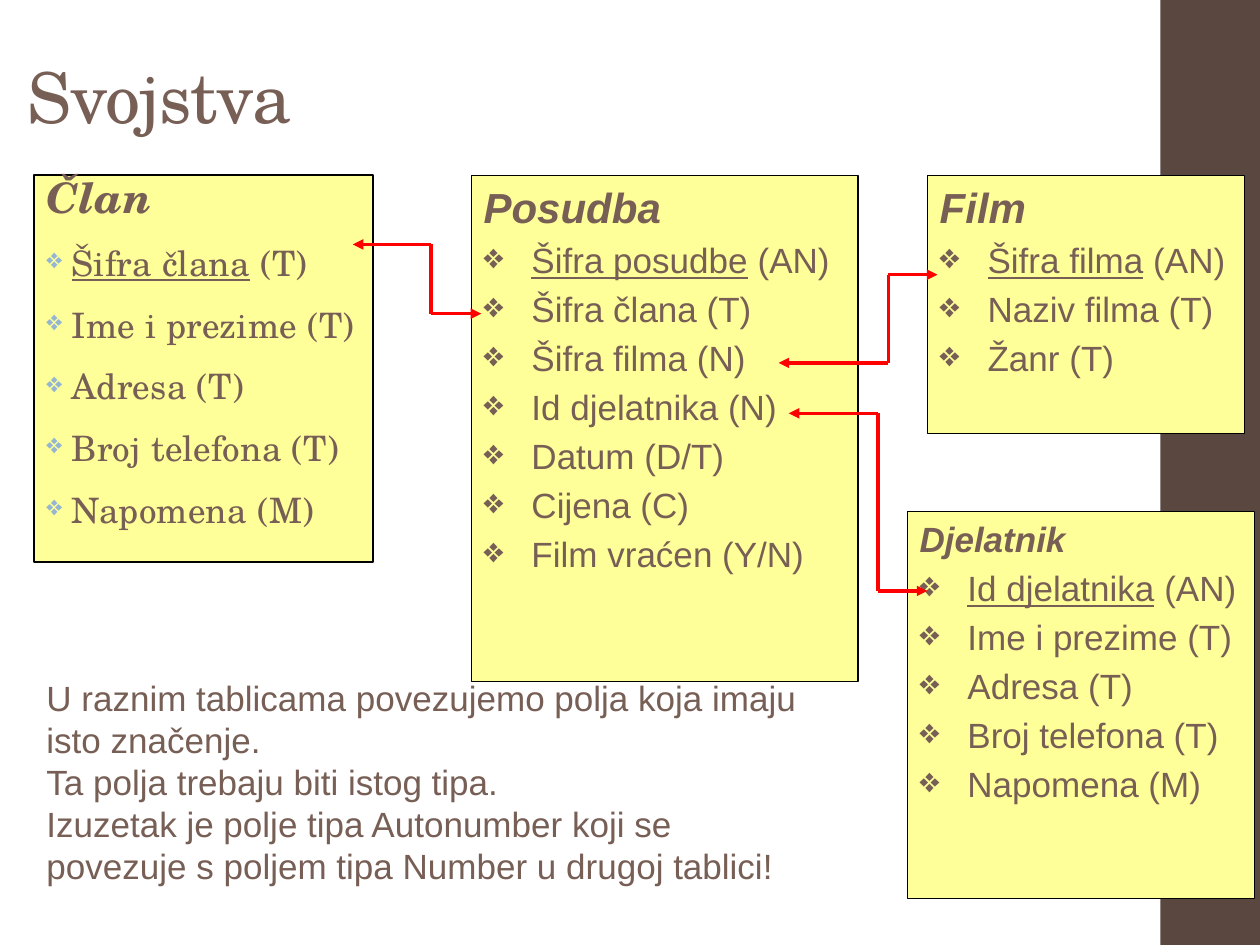
import pptx
import pptx.util
import pptx.dml.color
import pptx.enum.shapes
import pptx.enum.text
import pptx.oxml.ns
from lxml import etree

Inches, Pt = pptx.util.Inches, pptx.util.Pt
COLORS = {"text": "775F55", "band": "594740", "box": "FFFF99",
          "border": "000000", "bullet": "94B6D2", "link": "FF0000"}
SERIF, SANS = "TeX Gyre Schola", "Arial"


def rgb(name):
    return pptx.dml.color.RGBColor.from_string(COLORS[name])


def add_xml(parent, tag, **attributes):
    return etree.SubElement(parent, pptx.oxml.ns.qn(tag), attributes)


class SlideBuilder:
    def __init__(self, presentation):
        self.slide = presentation.slides.add_slide(presentation.slide_layouts[5])

    def run(self, paragraph, text, size, font=SANS, spacing=None, **style):
        run = paragraph.add_run()
        run.text = text
        run.font.name, run.font.size = font, Pt(size)
        run.font.color.rgb = rgb("text")
        for key, value in style.items():
            setattr(run.font, key, value)
        if spacing:
            run.font._element.set("spc", str(spacing))

    def space_before(self, paragraph, percent):
        before = add_xml(paragraph._p.get_or_add_pPr(), "a:spcBef")
        add_xml(before, "a:spcPct", val=str(percent * 1000))

    def title(self, text, left, top, width, height):
        title = self.slide.shapes.title
        title.left, title.top = Inches(left), Inches(top)
        title.width, title.height = Inches(width), Inches(height)
        frame = title.text_frame
        frame.word_wrap = True
        frame.vertical_anchor = pptx.enum.text.MSO_ANCHOR.BOTTOM
        paragraph = frame.paragraphs[0]
        paragraph.alignment = pptx.enum.text.PP_ALIGN.LEFT
        paragraph.line_spacing = 0.9
        self.run(paragraph, text, 40, SERIF, spacing=-50)

    def rectangle(self, left, top, width, height, fill, border=None):
        shape = self.slide.shapes.add_shape(
            pptx.enum.shapes.MSO_SHAPE.RECTANGLE,
            Inches(left), Inches(top), Inches(width), Inches(height))
        shape.shadow.inherit = False
        shape.fill.solid()
        shape.fill.fore_color.rgb = rgb(fill)
        if border:
            shape.line.color.rgb = rgb(border)
            shape.line.width = Pt(0.75)
        else:
            shape.line.fill.background()
        return shape

    def entity(self, name, key, fields, bounds, name_size=24, serif=False):
        """Box with an entity name, its underlined key and its other fields."""
        frame = self.rectangle(*bounds, "box", "border").text_frame
        frame.word_wrap = True
        frame.vertical_anchor = pptx.enum.text.MSO_ANCHOR.TOP
        look = {"font": SERIF, "spacing": 10} if serif else {"font": SANS}
        for index, text in enumerate([name, *fields]):
            paragraph = frame.add_paragraph() if index else frame.paragraphs[0]
            paragraph.alignment = pptx.enum.text.PP_ALIGN.LEFT
            self.format_entry(paragraph, bool(index), serif)
            if index == 0:
                self.run(paragraph, text, name_size, bold=True, italic=True, **look)
            elif index == 1:
                self.run(paragraph, key, 20, underline=True, **look)
                self.run(paragraph, text, 20, **look)
            else:
                self.run(paragraph, text, 20, **look)

    def format_entry(self, paragraph, bulleted, serif):
        indent = Inches(0.2 if serif else 0.38)
        properties = paragraph._p.get_or_add_pPr()
        properties.set("marL", str(indent))
        properties.set("indent", str(-indent))
        if serif:
            paragraph.line_spacing = 0.8
            paragraph.space_before, paragraph.space_after = Pt(14), Pt(2)
        else:
            self.space_before(paragraph, 20)
        if bulleted:
            if serif:
                color = add_xml(properties, "a:buClr")
                add_xml(color, "a:srgbClr", val=COLORS["bullet"])
                add_xml(properties, "a:buSzPct", val="80000")
            add_xml(properties, "a:buChar", char="❖")

    def link(self, *points):
        """Elbow line of straight segments with an arrowhead at each end."""
        last = len(points) - 2
        for index, (start, end) in enumerate(zip(points, points[1:])):
            segment = self.slide.shapes.add_connector(
                pptx.enum.shapes.MSO_CONNECTOR.STRAIGHT,
                *(Inches(value) for value in start + end))
            segment.line.color.rgb = rgb("link")
            segment.line.width = Pt(2)
            line = segment.line._get_or_add_ln()
            if index == 0:
                add_xml(line, "a:headEnd", type="triangle")
            if index == last:
                add_xml(line, "a:tailEnd", type="triangle")
            add_xml(segment._element.spPr, "a:effectLst")

    def note(self, lines, left, top, width, height):
        frame = self.slide.shapes.add_textbox(
            Inches(left), Inches(top), Inches(width), Inches(height)).text_frame
        frame.word_wrap = True
        paragraph = frame.paragraphs[0]
        self.space_before(paragraph, 50)
        for index, text in enumerate(lines):
            if index:
                paragraph.add_line_break()
            self.run(paragraph, text, 20)


def main():
    presentation = pptx.Presentation()
    presentation.slide_width, presentation.slide_height = Inches(10), Inches(7.5)
    builder = SlideBuilder(presentation)

    # Side band and title
    builder.rectangle(9.21, 0, 0.79, 7.5, "band")
    builder.title("Svojstva", 0.12, 0.05, 8.87, 1.1)

    # Entities
    person_fields = ["Ime i prezime (T)", "Adresa (T)", "Broj telefona (T)",
                     "Napomena (M)"]
    builder.entity("Član", "Šifra člana", [" (T)", *person_fields],
                   (0.27, 1.39, 2.69, 3.07), serif=True)
    builder.entity("Film", "Šifra filma", [" (AN)", "Naziv filma (T)", "Žanr (T)"],
                   (7.36, 1.39, 2.52, 2.05))
    builder.entity("Posudba", "Šifra posudbe",
                   [" (AN)", "Šifra člana (T)", "Šifra filma (N)",
                    "Id djelatnika (N)", "Datum (D/T)", "Cijena (C)",
                    "Film vraćen (Y/N)"],
                   (3.74, 1.39, 3.07, 4.02))
    builder.entity("Djelatnik", "Id djelatnika", [" (AN)", *person_fields],
                   (7.2, 4.06, 2.76, 3.07), name_size=20)

    # Links between matching fields
    builder.link((2.8, 1.94), (3.42, 1.94), (3.42, 2.49), (3.82, 2.49))
    builder.link((7.44, 2.18), (7.05, 2.18), (7.05, 2.88), (6.18, 2.88))
    builder.link((7.36, 4.69), (6.97, 4.69), (6.97, 3.28), (6.26, 3.28))

    # Explanation
    builder.note(["U raznim tablicama povezujemo polja koja imaju isto značenje. ",
                  "Ta polja trebaju biti istog tipa. ",
                  "Izuzetak je polje tipa Autonumber koji se povezuje s poljem "
                  "tipa Number u drugoj tablici!"],
                 0.27, 5.32, 6.3, 1.77)

    presentation.save("out.pptx")


if __name__ == "__main__":
    main()
